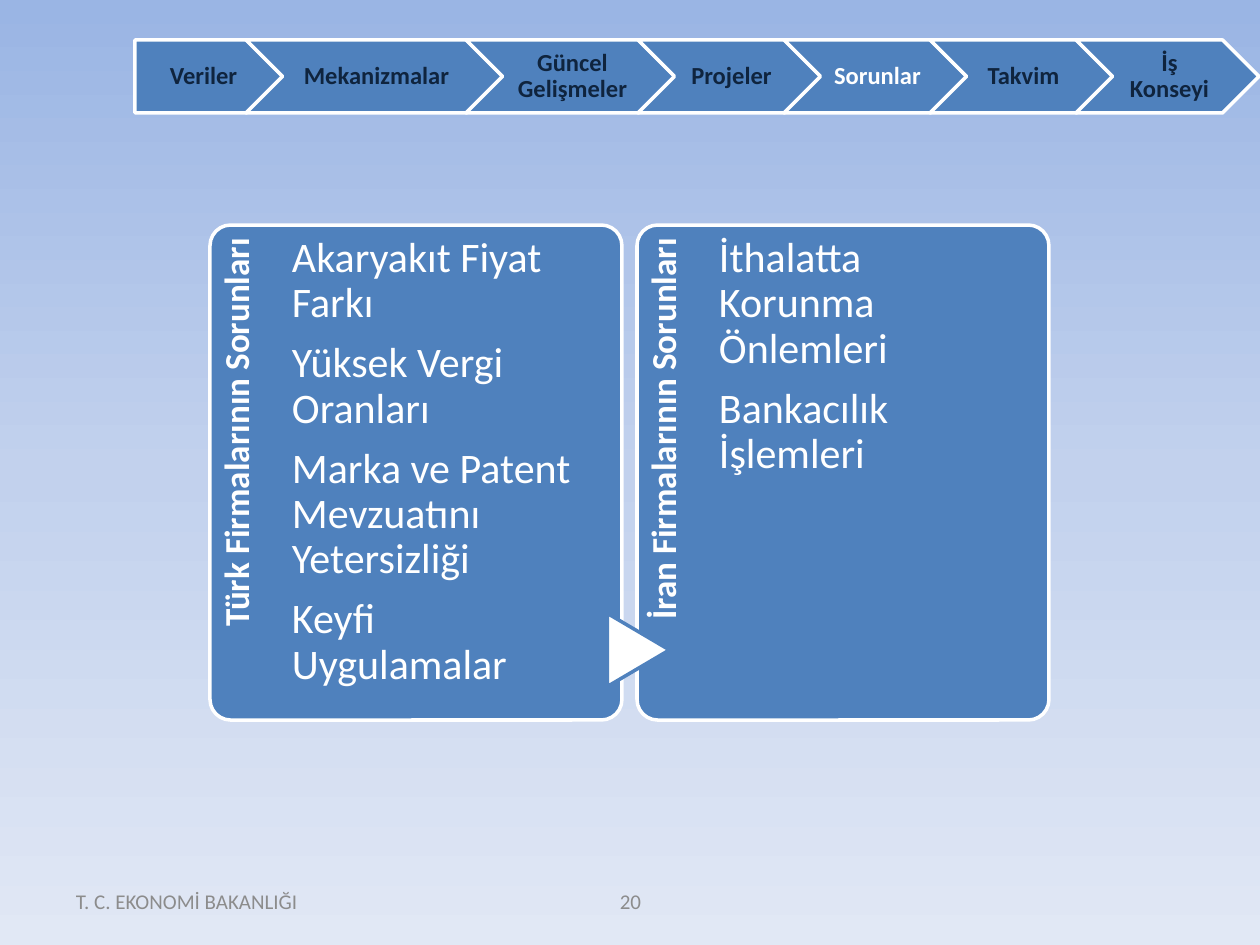
from copy import deepcopy

from pptx import Presentation
from pptx import util as u
from pptx.dml.color import RGBColor
from pptx.enum import shapes, text

COLOURS = {
    "blue": "4F81BD", "white": "FFFFFF", "navy": "0F243E", "grey": "8C8C8C",
    "sky": "9AB5E4", "haze": "C2D1ED", "mist": "E1E8F5",
}
STEPS = [("Veriler", 148), ("Mekanizmalar", 257), ("Güncel Gelişmeler", 209),
         ("Projeler", 183), ("Sorunlar", 183), ("Takvim", 183), ("İş Konseyi", 183)]
CURRENT_STEP = "Sorunlar"
PANELS = [
    ("Türk Firmalarının Sorunları",
     ["Akaryakıt Fiyat Farkı", "Yüksek Vergi Oranları",
      "Marka ve Patent Mevzuatını Yetersizliği", "Keyfi Uygulamalar"]),
    ("İran Firmalarının Sorunları",
     ["İthalatta Korunma Önlemleri", "Bankacılık İşlemleri"]),
]


def px(*lengths):
    return [u.Emu(round(length * 914400 / 126)) for length in lengths]


def colour(name):
    return RGBColor.from_string(COLOURS[name])


def assign(target, values):
    for name, value in values.items():
        setattr(target, name, value)


class SlideBuilder:
    font = "Calibri"

    def __init__(self, deck):
        self.slide = deck.slides.add_slide(deck.slide_layouts[6])

    def background(self, names):
        """Fill the slide from top to bottom with three evenly spaced colours."""
        fill = self.slide.background.fill
        fill.gradient()
        fill.gradient_angle = 270
        first = fill.gradient_stops[0]._gs
        first.addnext(deepcopy(first))
        for index, (stop, name) in enumerate(zip(fill.gradient_stops, names)):
            stop.position = index / 2
            stop.color.rgb = colour(name)

    def shape(self, kind, at, fill="blue", line="white", rotation=0):
        shape = self.slide.shapes.add_shape(kind, *px(*at))
        shape.shadow.inherit = False
        shape.rotation = rotation
        shape.fill.solid()
        shape.fill.fore_color.rgb = colour(fill)
        shape.line.color.rgb = colour(line)
        shape.line.width = u.Pt(2)
        return shape

    def text(self, lines, at, size, ink, insets, align=text.PP_ALIGN.LEFT,
             anchor=text.MSO_ANCHOR.TOP, bold=False, spacing=0.9, rotation=0):
        box = self.slide.shapes.add_textbox(*px(*at))
        box.rotation = rotation
        left, top, right, bottom = px(*insets)
        frame = box.text_frame
        assign(frame, {"word_wrap": True, "vertical_anchor": anchor,
                       "margin_left": left, "margin_top": top,
                       "margin_right": right, "margin_bottom": bottom})
        for index, line in enumerate(lines):
            para = frame.add_paragraph() if index else frame.paragraphs[0]
            assign(para, {"alignment": align, "line_spacing": spacing,
                          "space_after": u.Pt(size * 0.35 if len(lines) > 1 else 0)})
            span = para.add_run()
            span.text = line
            assign(span.font, {"name": self.font, "size": u.Pt(size), "bold": bold})
            span.font.color.rgb = colour(ink)

    def step_bar(self, left, top, height):
        """Draw the row of arrows, each one tucked into the notch of the next."""
        notch = height // 2 + 1
        for index, (label, width) in enumerate(STEPS):
            if index:
                kind = shapes.MSO_SHAPE.CHEVRON
                at = (left + notch, top, width - 2 * notch, height)
            else:
                kind = shapes.MSO_SHAPE.PENTAGON
                at = (left, top, width - notch // 2, height)
            self.shape(kind, (left, top, width, height))
            self.text([label], at, 14, "white" if label == CURRENT_STEP else "navy",
                      (7 if index else 10, 5, 3, 5), text.PP_ALIGN.CENTER,
                      text.MSO_ANCHOR.MIDDLE, bold=True)
            left += width - notch

    def panel(self, left, top, heading, items):
        width, height, strip, length = 412, 495, 82, 406
        card = self.shape(shapes.MSO_SHAPE.ROUNDED_RECTANGLE, (left, top, width, height))
        card.adjustments[0] = 0.05
        shift = (length - strip) // 2
        self.text([heading], (left - shift, top + shift, length, strip), 20, "white",
                  (0, 9, 13, 0), text.PP_ALIGN.RIGHT, bold=True, rotation=270)
        self.text(items, (left + strip, top, 307, height), 24, "white", (0, 11, 0, 0))

    def footer(self, label, left, width, align):
        self.text([label], (left, 876, width, 50), 12, "grey", (13, 6, 13, 6),
                  align, text.MSO_ANCHOR.MIDDLE, spacing=1.0)


def main():
    deck = Presentation()
    deck.slide_width, deck.slide_height = px(1260, 945)
    page = SlideBuilder(deck)
    page.background(["sky", "haze", "mist"])
    page.footer("T. C. EKONOMİ BAKANLIĞI", 63, 294, text.PP_ALIGN.LEFT)
    page.footer("20", 431, 399, text.PP_ALIGN.CENTER)
    for index, (heading, items) in enumerate(PANELS):
        page.panel(210 + 427 * index, 225, heading, items)
    page.shape(shapes.MSO_SHAPE.FLOWCHART_EXTRACT, (602, 619, 73, 62),
               fill="white", line="blue", rotation=90)
    page.step_bar(135, 40, 73)
    deck.save("out.pptx")


if __name__ == "__main__":
    main()
